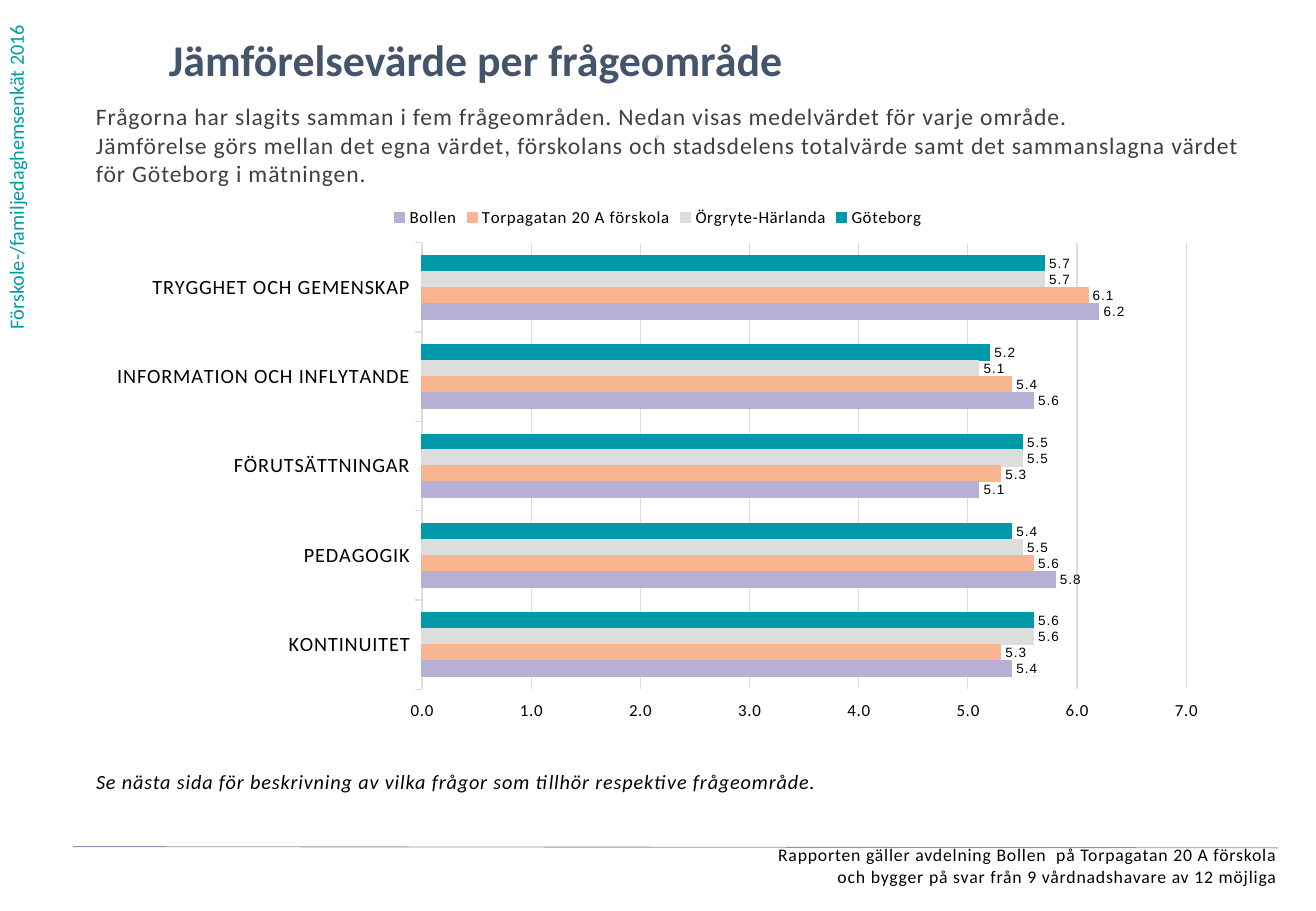
from dataclasses import dataclass

from lxml.etree import SubElement
from pptx import Presentation
from pptx.chart.data import CategoryChartData
from pptx.dml.color import RGBColor
from pptx.enum.chart import (XL_CHART_TYPE, XL_LABEL_POSITION, XL_LEGEND_POSITION,
                             XL_TICK_LABEL_POSITION, XL_TICK_MARK)
from pptx.enum.shapes import MSO_CONNECTOR
from pptx.enum.text import MSO_ANCHOR, PP_ALIGN
from pptx.oxml import parse_xml
from pptx.oxml.ns import nsdecls, qn
from pptx.util import Inches, Pt


@dataclass(frozen=True)
class Theme:
    font: str = "Calibri"
    label_font: str = "Arial"
    black: str = "000000"
    title: str = "44546A"
    body: str = "404040"
    accent: str = "009BA4"
    dot: str = "D2D9E2"
    rule: str = "8497B0"
    grid: str = "DDDDDD"
    title_size: float = 26
    body_size: float = 14
    note_size: float = 12
    footer_size: float = 10.5
    chart_size: float = 10
    label_size: float = 8
    spacing: str = "50"


theme = Theme()


def write_text(shape, text, size, color=theme.black, bold=False, italic=False,
               align=PP_ALIGN.LEFT, spaced=True, vertical=False):
    """Fill a shape with one paragraph per line of text."""
    frame = shape.text_frame
    frame.word_wrap = True
    frame.vertical_anchor = MSO_ANCHOR.TOP
    frame.margin_left = frame.margin_right = frame.margin_top = frame.margin_bottom = 0
    if vertical:
        frame._txBody.bodyPr.set("vert", "vert270")
    frame.text = text
    for paragraph in frame.paragraphs:
        paragraph.alignment = align
        paragraph.line_spacing = 1.0
        for run in paragraph.runs:
            font = run.font
            font.name, font.size = theme.font, Pt(size)
            font.bold, font.italic = bold, italic
            font.color.rgb = RGBColor.from_string(color)
            if spaced:
                run._r.get_or_add_rPr().set("spc", theme.spacing)


def style_font(font, size, name=theme.font):
    """Format chart text with the slide's letter spacing."""
    font.name, font.size, font.bold = name, Pt(size), False
    font.color.rgb = RGBColor.from_string(theme.black)
    font._element.set("spc", theme.spacing)


presentation = Presentation()
presentation.slide_width = Inches(10.83)
presentation.slide_height = Inches(7.5)
slide = presentation.slides.add_slide(presentation.slide_layouts[5])

# Title
title = slide.shapes.title
title.left, title.top = Inches(1.39), Inches(0.27)
title.width, title.height = Inches(8.34), Inches(0.57)
write_text(title, "Jämförelsevärde per frågeområde", theme.title_size,
           color=theme.title, bold=True, spaced=False)

# Side label, introduction, dot, note and footer
texts = [
    ((0.03, 0, 0.3, 2.71), "Förskole-/familjedaghemsenkät 2016",
     dict(size=theme.note_size, color=theme.accent, spaced=False, vertical=True)),
    ((0.79, 0.84, 9.46, 0.75),
     "Frågorna har slagits samman i fem frågeområden. Nedan visas medelvärdet för varje område.\n"
     "Jämförelse görs mellan det egna värdet, förskolans och stadsdelens totalvärde samt "
     "det sammanslagna värdet för Göteborg i mätningen.",
     dict(size=theme.body_size, color=theme.body)),
    ((3.87, 1.02, 3.08, 0.39), "⋅",
     dict(size=theme.note_size, color=theme.dot, bold=True, align=PP_ALIGN.CENTER)),
    ((0.79, 6.33, 9.25, 0.3),
     "Se nästa sida för beskrivning av vilka frågor som tillhör respektive frågeområde.",
     dict(size=theme.note_size, italic=True)),
    ((0.12, 6.95, 10.39, 0.43),
     "Rapporten gäller avdelning Bollen  på Torpagatan 20 A förskola\n"
     "och bygger på svar från 9 vårdnadshavare av 12 möjliga",
     dict(size=theme.footer_size, align=PP_ALIGN.RIGHT)),
]
for box, text, text_format in texts:
    write_text(slide.shapes.add_textbox(*map(Inches, box)), text, **text_format)

# Chart data
areas = ["TRYGGHET OCH GEMENSKAP", "INFORMATION OCH INFLYTANDE", "FÖRUTSÄTTNINGAR",
         "PEDAGOGIK", "KONTINUITET"]
groups = [
    ("Göteborg", "0099AA", [5.7, 5.2, 5.5, 5.4, 5.6]),
    ("Örgryte-Härlanda", "DDDDDD", [5.7, 5.1, 5.5, 5.5, 5.6]),
    ("Torpagatan 20 A förskola", "F9B590", [6.1, 5.4, 5.3, 5.6, 5.3]),
    ("Bollen", "B6B1D4", [6.2, 5.6, 5.1, 5.8, 5.4]),
]
chart_data = CategoryChartData(number_format="0.0")
chart_data.categories = areas
for name, _, values in groups:
    chart_data.add_series(name, values)
chart = slide.shapes.add_chart(
    XL_CHART_TYPE.BAR_CLUSTERED, Inches(0.79), Inches(1.6), Inches(9.25), Inches(4.43),
    chart_data).chart
chart.has_title = False
style_font(chart.font, theme.chart_size)

# Plot position as shares of the chart area
layout = parse_xml(f'<c:layout {nsdecls("c")}><c:manualLayout/></c:layout>')
for tag, value in [("layoutTarget", "inner"), ("xMode", "edge"), ("yMode", "edge"),
                   ("x", "0.29"), ("y", "0.09"), ("w", "0.68"), ("h", "0.83")]:
    SubElement(layout[0], qn(f"c:{tag}")).set("val", value)
plot_area = chart._chartSpace.chart.plotArea
for old_layout in plot_area.findall(qn("c:layout")):
    plot_area.remove(old_layout)
plot_area.insert(0, layout)

# Bars and value labels
plot = chart.plots[0]
plot.gap_width, plot.overlap = 162, 0
plot.vary_by_categories = False
for series, (_, color, _) in zip(plot.series, groups):
    series.format.fill.solid()
    series.format.fill.fore_color.rgb = RGBColor.from_string(color)
    series.format.line.color.rgb = RGBColor.from_string(color)
    series.format.line.width = Pt(0.75)
    labels = series.data_labels
    labels.show_value = True
    labels.number_format, labels.number_format_is_linked = "0.0;0.0", False
    labels.position = XL_LABEL_POSITION.OUTSIDE_END
    style_font(labels.font, theme.label_size, theme.label_font)

# Axes and legend; the reversed categories put the high end at the bottom
category_axis, value_axis = chart.category_axis, chart.value_axis
category_axis.reverse_order = True
category_axis.major_tick_mark = XL_TICK_MARK.OUTSIDE
style_font(category_axis.tick_labels.font, theme.note_size)
value_axis.minimum_scale, value_axis.maximum_scale, value_axis.major_unit = 0, 7, 1
value_axis.major_tick_mark = XL_TICK_MARK.OUTSIDE
value_axis.tick_label_position = XL_TICK_LABEL_POSITION.HIGH
value_axis.has_major_gridlines = True
value_axis.format.line.fill.background()
value_axis.tick_labels.number_format = "0.0;0.0"
value_axis.tick_labels.number_format_is_linked = False
style_font(value_axis.tick_labels.font, theme.chart_size)
for line in (category_axis.format.line, value_axis.major_gridlines.format.line):
    line.color.rgb = RGBColor.from_string(theme.grid)
    line.width = Pt(0.75)
chart.has_legend = True
chart.legend.position = XL_LEGEND_POSITION.TOP
chart.legend.include_in_layout = False
style_font(chart.legend.font, theme.chart_size)

# Footer rule
rule = slide.shapes.add_connector(MSO_CONNECTOR.STRAIGHT, Inches(0.6), Inches(6.97),
                                  Inches(10.52), Inches(6.98))
rule.line.color.rgb = RGBColor.from_string(theme.rule)
rule.line.width = Pt(0.5)
SubElement(rule._element.spPr, qn("a:effectLst"))

presentation.save("out.pptx")
